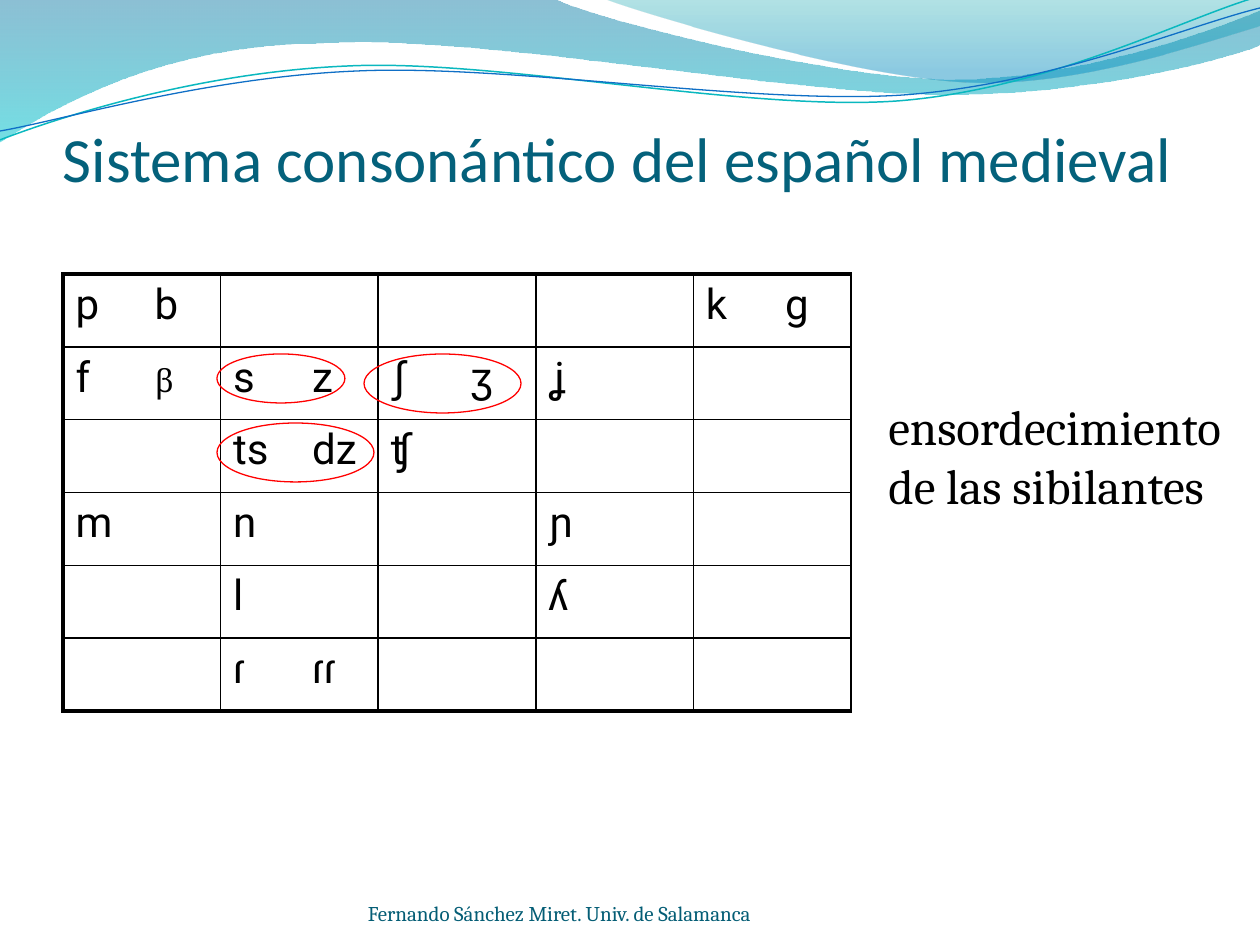
from math import cos, radians, sin

from lxml import etree
from pptx import Presentation
from pptx.dml.color import RGBColor
from pptx.enum.shapes import MSO_SHAPE
from pptx.enum.text import MSO_ANCHOR, MSO_AUTO_SIZE, PP_ALIGN
from pptx.oxml.ns import qn
from pptx.util import Pt

ELLIPSE = MSO_SHAPE.OVAL
TOP, BOTTOM = MSO_ANCHOR.TOP, MSO_ANCHOR.BOTTOM
LEFT, JUSTIFY = PP_ALIGN.LEFT, PP_ALIGN.JUSTIFY
GROW = MSO_AUTO_SIZE.SHAPE_TO_FIT_TEXT
PX = 914400 / 126  # EMU per pixel


def px(value):
    return round(value * PX)


# Theme: (font, points, colour) for text, (colour, points) for lines
THEME = {
    "title": ("Calibri", 36, "04617B"),
    "phoneme": ("Roboto", 24, "000000"),
    "greek": ("Cambria", 18, "000000"),
    "remark": ("Cambria", 28, "000000"),
    "footer": ("Cambria", 12, "045D75"),
    "ring": ("FF0000", 0.75),
    "grid": ("000000", 1),
    "frame": ("000000", 2.25),
    "teal strand": ("0AB8BF", 0.85),
    "blue strand": ("0F6FC6", 0.75),
    "left band": [(0, "0074A1", 45), (100, "00C6CF", 55)],
    "right band": [(0, "00A1A9", 30), (80, "008BBF", 45)],
}

# Content
CONSONANTS = [
    ["p\tb", "", "", "", "k\tg"],
    ["f\tβ", "s\tz", "ʃ\tʒ", "ʝ", ""],
    ["", "ts\tdz", "ʧ", "", ""],
    ["m", "n", "", "ɲ", ""],
    ["", "l", "", "ʎ", ""],
    ["", "ɾ\tɾɾ", "", "", ""],
]
TABLE, TAB = (63, 274, 788, 437), 79
RINGS = [(217, 423, 157, 59), (217, 354, 128, 49), (364, 354, 157, 59)]

# Text, style, place, format values
TITLE = ("Sistema consonántico del español medieval", "title", (63, 38, 1134, 157),
         dict(vertical_anchor=BOTTOM, margin_left=0, margin_right=0,
              margin_top=px(6), margin_bottom=0))
REMARK = ("ensordecimiento de las sibilantes", "remark", (876, 390, 384, 131),
          dict(vertical_anchor=TOP, auto_size=GROW))
FOOTER = ("Fernando Sánchez Miret. Univ. de Salamanca", "footer", (368, 876, 462, 50),
          dict(vertical_anchor=BOTTOM, margin_left=0, margin_right=0,
               margin_top=0, margin_bottom=0))

# Waves: a start point, then line ends (2 numbers) or cubic curves (6 numbers)
BANDS = [
    ("left band",
     [(0, -1), (554, -1), (600, 21, 837, 79, 955, 79), (1074, 79, 1207, 33, 1260, 11),
      (1261, 45), (1239, 55, 1096, 96, 940, 94), (784, 94, 481, 35, 324, 43),
      (163, 44, 58, 105, -1, 142), (0, -1)]),
    ("right band",
     [(604, -1), (641, 14, 859, 78, 969, 82), (1079, 87, 1211, 40, 1260, 26),
      (1260, 0), (604, -1)]),
]
TILT = 357.3
STRANDS = [
    ("teal strand", (629, 72),
     [(0, 140), (60, 117, 199, 72, 349, 66), (498, 59, 747, 112, 898, 101),
      (1050, 89, 1182, 19, 1257, -3)]),
    ("blue strand", (629, 74),
     [(0, 131), (59, 121, 207, 77, 357, 71), (508, 64, 752, 105, 903, 95),
      (1053, 84, 1186, 26, 1260, 8)]),
]


def child(parent, tag, **attributes):
    return etree.SubElement(parent, qn(tag), {k: str(v) for k, v in attributes.items()})


def turn(point, pivot, degrees):
    angle = radians(degrees)
    dx, dy = point[0] - pivot[0], point[1] - pivot[1]
    return (pivot[0] + dx * cos(angle) - dy * sin(angle),
            pivot[1] + dx * sin(angle) + dy * cos(angle))


def add_wave(page, steps, close, pivot=(0, 0), tilt=0):
    """Draw through every point, then make each curve's three points one cubic."""
    points = [turn(step[i:i + 2], pivot, -tilt)
              for step in steps for i in range(0, len(step), 2)]
    points = [(px(x), px(y)) for x, y in points]
    builder = page.shapes.build_freeform(*points[0])
    builder.add_line_segments(points[1:], close=close)
    wave = builder.convert_to_shape()
    wave.shadow.inherit = False
    wave.rotation = tilt
    segments = iter(list(wave._element.iter(qn("a:lnTo"))))
    for step in steps[1:]:
        first = next(segments)
        if len(step) == 6:
            first.tag = qn("a:cubicBezTo")
            for segment in (next(segments), next(segments)):
                first.append(segment[0])
                segment.getparent().remove(segment)
    return wave


def set_gradient(shape, stops):
    shape.fill.gradient()
    gradient = shape._element.spPr.find(qn("a:gradFill"))
    for old in list(gradient):
        gradient.remove(old)
    stop_list = child(gradient, "a:gsLst")
    for position, colour, opacity in stops:
        stop = child(stop_list, "a:gs", pos=position * 1000)
        child(child(stop, "a:srgbClr", val=colour), "a:alpha", val=opacity * 1000)
    child(gradient, "a:lin", ang=5400000, scaled=0)


def set_outline(shape, line):
    colour, width = line
    shape.fill.background()
    shape.line.color.rgb = RGBColor.from_string(colour)
    shape.line.width = Pt(width)


def add_span(para, text, style):
    name, size, colour = THEME[style]
    span = para.add_run()
    span.text = text
    for key, value in dict(name=name, size=Pt(size)).items():
        setattr(span.font, key, value)
    span.font.color.rgb = RGBColor.from_string(colour)


def add_text(page, text, style, place, values):
    frame = page.shapes.add_textbox(*map(px, place)).text_frame
    for key, value in dict(values, word_wrap=True).items():
        setattr(frame, key, value)
    frame.paragraphs[0].alignment = LEFT
    add_span(frame.paragraphs[0], text, style)


def set_borders(cell, edges):
    properties = cell._tc.get_or_add_tcPr()
    for index, (tag, style) in enumerate(edges.items()):
        colour, width = THEME[style]
        line = etree.Element(qn(tag), w=str(Pt(width)))
        child(child(line, "a:solidFill"), "a:srgbClr", val=colour)
        properties.insert(index, line)


def add_consonants(page):
    rows, columns = len(CONSONANTS), len(CONSONANTS[0])
    table = page.shapes.add_table(rows, columns, *map(px, TABLE)).table
    table.first_row = table.horz_banding = False
    for r, row in enumerate(CONSONANTS):
        for c, text in enumerate(row):
            cell = table.cell(r, c)
            cell.fill.background()
            set_borders(cell, {
                "a:lnL": "frame" if c == 0 else "grid",
                "a:lnR": "grid",
                "a:lnT": "frame" if r == 0 else "grid",
                "a:lnB": "frame" if r == rows - 1 else "grid",
            })
            para = cell.text_frame.paragraphs[0]
            para.alignment = JUSTIFY
            if "\t" in text:
                child(child(para._p.get_or_add_pPr(), "a:tabLst"), "a:tab", pos=px(TAB), algn="l")
            latin, greek, _ = text.partition("β")
            for part, style in ((latin, "phoneme"), (greek, "greek")):
                if part:
                    add_span(para, part, style)


def main():
    deck = Presentation()
    deck.slide_width, deck.slide_height = px(1260), px(945)
    page = deck.slides.add_slide(deck.slide_layouts[6])

    # Wave decoration
    for style, steps in BANDS:
        band = add_wave(page, steps, True)
        set_gradient(band, THEME[style])
        band.line.fill.background()
    for style, pivot, steps in STRANDS:
        set_outline(add_wave(page, steps, False, pivot, TILT), THEME[style])

    # Title, table, rings round the sibilants, remark and footer
    add_text(page, *TITLE)
    add_consonants(page)
    for place in RINGS:
        ring = page.shapes.add_shape(ELLIPSE, *map(px, place))
        ring.shadow.inherit = False
        set_outline(ring, THEME["ring"])
    for entry in (REMARK, FOOTER):
        add_text(page, *entry)

    deck.save("out.pptx")


if __name__ == "__main__":
    main()
